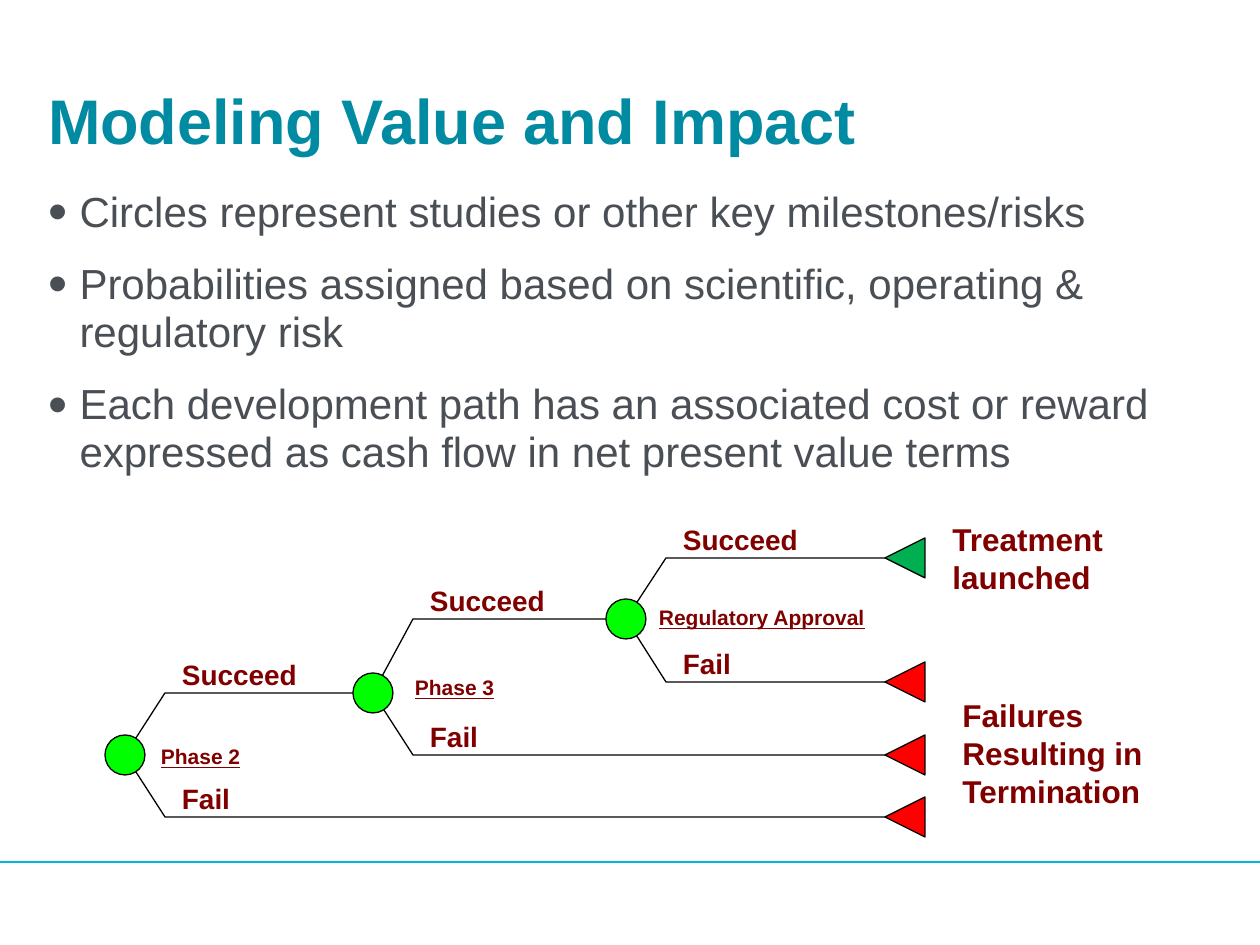
"""Build the slide on modeling value and impact with a decision tree."""
from dataclasses import dataclass

from lxml import etree
from pptx import Presentation, util as u
from pptx.dml.color import RGBColor
from pptx.enum import shapes, text
from pptx.oxml.ns import qn

PX = u.Inches(10) / 1260
FONT = "Arial"
TEAL = RGBColor(0x00, 0x8B, 0xA2)
CYAN = RGBColor(0x00, 0xB7, 0xD5)
GRAY = RGBColor(0x4A, 0x4F, 0x55)
MAROON = RGBColor(0x80, 0x00, 0x00)
BLACK = RGBColor(0x00, 0x00, 0x00)
LIME = RGBColor(0x00, 0xFF, 0x00)
GREEN = RGBColor(0x00, 0xB0, 0x50)
RED = RGBColor(0xFF, 0x00, 0x00)
RADIUS = 20
OUTCOME_X = 885


@dataclass(frozen=True)
class Milestone:
    name: str
    x: int
    y: int
    name_x: int
    name_y: int
    name_width: int
    succeed_x: int
    succeed_y: int
    fail_y: int


@dataclass(frozen=True)
class Note:
    lines: tuple[str, ...]
    x: int
    y: int
    width: int
    height: int


MILESTONES = (
    Milestone("Regulatory Approval", 626, 619, 659, 605, 215, OUTCOME_X, 558, 682),
    Milestone("Phase 3", 373, 693, 415, 675, 90, 606, 619, 755),
    Milestone("Phase 2", 125, 755, 161, 744, 90, 353, 693, 817),
)
NOTES = (
    Note(("Failures Resulting in", "Termination"), 950, 690, 210, 127),
    Note(("Treatment launched",), 940, 514, 210, 89),
)
BULLETS = (
    "Circles represent studies or other key milestones/risks",
    "Probabilities assigned based on scientific, operating & \vregulatory risk",
    "Each development path has an associated cost or reward \v"
    "expressed as cash flow in net present value terms",
)


def emu(px: int) -> int:
    return round(px * PX)


def add_text(page, lines: tuple[str, ...], x: int, y: int, width: int, height: int,
             size: int, color: RGBColor, bold: bool = True,
             underline: bool = False, inset: bool = False):
    box = page.shapes.add_textbox(emu(x), emu(y), emu(width), emu(height))
    frame = box.text_frame
    frame.word_wrap = True
    if not inset:
        frame.margin_left = frame.margin_right = 0
        frame.margin_top = frame.margin_bottom = 0
    frame.text = "\n".join(lines)
    for para in frame.paragraphs:
        for span in para.runs:
            font = span.font
            font.name, font.size, font.bold = FONT, u.Pt(size), bold
            font.color.rgb = color
            if underline:
                font.underline = True
    return box


def add_bullets(page) -> None:
    box = add_text(page, BULLETS, 48, 189, 1166, 300, 24, GRAY, bold=False)
    for index, para in enumerate(box.text_frame.paragraphs):
        para.line_spacing = 0.95
        if index:
            para.space_before = u.Pt(14)
        props = para._p.get_or_add_pPr()
        props.set("marL", str(u.Inches(0.25)))
        props.set("indent", str(-u.Inches(0.25)))
        etree.SubElement(props, qn("a:buSzPct")).set("val", "130000")
        etree.SubElement(props, qn("a:buFont")).set("typeface", FONT)
        etree.SubElement(props, qn("a:buChar")).set("char", "•")


def outline(shape, fill: RGBColor | None = None) -> None:
    shape.shadow.inherit = False
    shape.line.color.rgb = BLACK
    shape.line.width = 0
    if fill is None:
        shape.fill.background()
    else:
        shape.fill.solid()
        shape.fill.fore_color.rgb = fill


def add_path(page, points: list[tuple[int, int]], fill: RGBColor | None = None) -> None:
    builder = page.shapes.build_freeform(*points[0], scale=PX)
    builder.add_line_segments(points[1:], close=fill is not None)
    outline(builder.convert_to_shape(), fill)


def add_branch(page, stone: Milestone, label: str, end_x: int, y: int,
               outcome: RGBColor) -> None:
    bend = stone.x + 40
    add_path(page, [(end_x, y), (bend, y), (stone.x, stone.y)])
    add_text(page, (label,), bend + 17, y - 35, 125, 34, 16, MAROON)
    if end_x == OUTCOME_X:
        back = end_x + 2 * RADIUS
        add_path(page, [(end_x, y), (back, y - RADIUS), (back, y + RADIUS)], outcome)


def add_milestone(page, stone: Milestone) -> None:
    circle = page.shapes.add_shape(
        shapes.MSO_SHAPE.OVAL, emu(stone.x - RADIUS), emu(stone.y - RADIUS),
        emu(2 * RADIUS), emu(2 * RADIUS))
    outline(circle, LIME)
    add_text(page, (stone.name,), stone.name_x, stone.name_y, stone.name_width, 26,
             12, MAROON, underline=True)


def add_footer_line(page) -> None:
    line = page.shapes.add_connector(
        shapes.MSO_CONNECTOR.STRAIGHT, 0, emu(862), emu(1260), emu(862))
    line.line.color.rgb = CYAN
    line.line.width = u.Pt(0.75)
    etree.SubElement(line._element.spPr, qn("a:effectLst"))


def main() -> None:
    deck = Presentation()
    deck.slide_width, deck.slide_height = u.Inches(10), u.Inches(7.5)
    page = deck.slides.add_slide(deck.slide_layouts[6])
    add_footer_line(page)
    title = add_text(page, ("Modeling Value and Impact",), 48, 66, 1166, 106, 36, TEAL)
    title.text_frame.vertical_anchor = text.MSO_ANCHOR.MIDDLE
    add_bullets(page)
    for stone in MILESTONES:
        add_branch(page, stone, "Succeed", stone.succeed_x, stone.succeed_y, GREEN)
        add_branch(page, stone, "Fail", OUTCOME_X, stone.fail_y, RED)
    for stone in MILESTONES:
        add_milestone(page, stone)
    for note in NOTES:
        add_text(page, note.lines, note.x, note.y, note.width, note.height,
                 18, MAROON, inset=True)
    deck.save("out.pptx")


if __name__ == "__main__":
    main()
